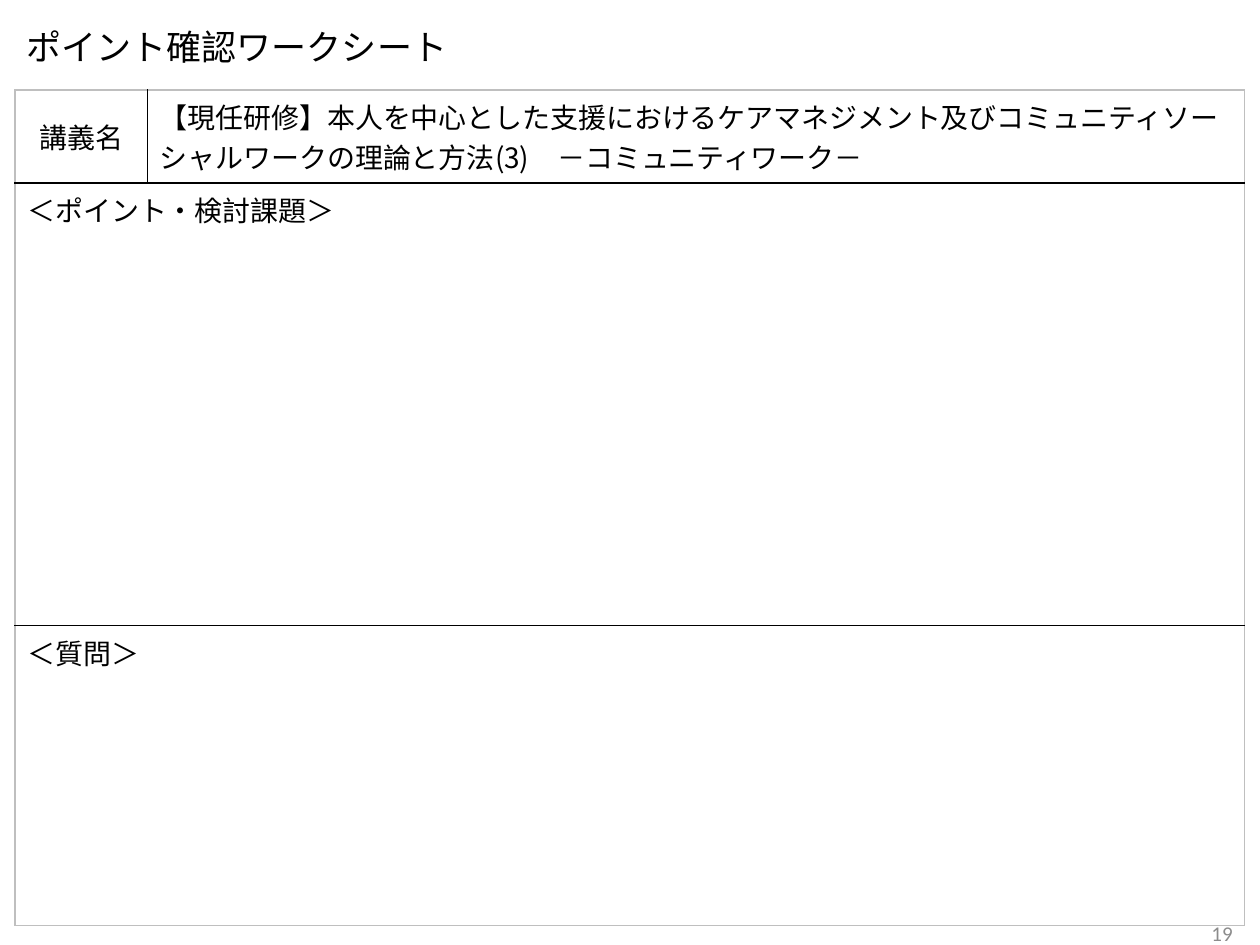
from dataclasses import dataclass

from lxml import etree
from pptx import Presentation
from pptx.dml.color import RGBColor
from pptx.enum.text import MSO_ANCHOR, MSO_AUTO_SIZE, PP_ALIGN
from pptx.oxml.ns import qn
from pptx.util import Cm, Pt

LEFT, CENTER, RIGHT = PP_ALIGN.LEFT, PP_ALIGN.CENTER, PP_ALIGN.RIGHT
TOP, MIDDLE = MSO_ANCHOR.TOP, MSO_ANCHOR.MIDDLE
NO_AUTOFIT = MSO_AUTO_SIZE.NONE
TITLE_ONLY = 5


@dataclass(frozen=True)
class Theme:
    font: str = "Noto Sans CJK JP"
    number_font: str = "Calibri"
    ink: str = "000000"
    muted: str = "8C8C8C"
    frame: str = "BFBFBF"
    title_size: int = 20
    body_size: int = 16
    number_size: int = 12
    border: float = 1


def write_text(frame, text, *, font, size, color, align=LEFT, spacing=None):
    """Put one formatted paragraph into a text frame."""
    frame.word_wrap = True
    para = frame.paragraphs[0]
    para.alignment = align
    if spacing:
        para.line_spacing = spacing
    span = para.add_run()
    span.text = text
    span.font.name = font
    span.font.size = Pt(size)
    span.font.bold = False
    span.font.color.rgb = RGBColor.from_string(color)
    # Japanese glyphs take the East Asian font
    east_asian = etree.Element(qn("a:ea"), typeface=font)
    span.font._element.find(qn("a:latin")).addnext(east_asian)


def set_borders(cell, width, colors):
    """Draw cell edges; colors run left, right, top, bottom."""
    properties = cell._tc.get_or_add_tcPr()
    for position, (edge, color) in enumerate(zip("LRTB", colors)):
        line = etree.Element(qn(f"a:ln{edge}"), w=str(Pt(width)))
        fill = etree.SubElement(line, qn("a:solidFill"))
        etree.SubElement(fill, qn("a:srgbClr"), val=color)
        properties.insert(position, line)


class Worksheet:
    def __init__(self, deck, theme):
        self.theme = theme
        self.page = deck.slides.add_slide(deck.slide_layouts[TITLE_ONLY])

    def title(self, text, left, top, width, height):
        box = self.page.shapes.title
        box.left, box.top, box.width, box.height = map(Cm, (left, top, width, height))
        frame = box.text_frame
        frame.auto_size = NO_AUTOFIT
        frame.vertical_anchor = MIDDLE
        write_text(frame, text, font=self.theme.font, size=self.theme.title_size,
                   color=self.theme.ink, spacing=0.9)

    def page_number(self, text, left, top, width, height):
        box = self.page.shapes.add_textbox(*map(Cm, (left, top, width, height)))
        box.text_frame.vertical_anchor = MIDDLE
        write_text(box.text_frame, text, font=self.theme.number_font,
                   size=self.theme.number_size, color=self.theme.muted, align=RIGHT)

    def form(self, rows, left, top, widths, heights):
        """Add a table; a row with a single text spans every column."""
        theme = self.theme
        table = self.page.shapes.add_table(
            len(heights), len(widths), Cm(left), Cm(top),
            Cm(sum(widths)), Cm(sum(heights))).table
        table.first_row = table.horz_banding = False
        for column, width in zip(table.columns, widths):
            column.width = Cm(width)
        for row, height in zip(table.rows, heights):
            row.height = Cm(height)

        # Grey outer frame, black rules inside
        last = len(widths) - 1
        rules = [theme.frame] + [theme.ink] * (len(heights) - 1) + [theme.frame]
        for r, texts in enumerate(rows):
            spanned = len(texts) == 1
            if spanned:
                table.cell(r, 0).merge(table.cell(r, last))
            for c in range(len(widths)):
                cell = table.cell(r, c)
                cell.fill.background()
                set_borders(cell, theme.border, (
                    theme.frame if spanned or c == 0 else theme.ink,
                    theme.frame if spanned or c == last else theme.ink,
                    rules[r],
                    rules[r + 1],
                ))
            for c, text in enumerate(texts):
                is_label = c == 0 and not spanned
                cell = table.cell(r, c)
                cell.vertical_anchor = MIDDLE if is_label else TOP
                write_text(cell.text_frame, text, font=theme.font,
                           size=theme.body_size, color=theme.ink,
                           align=CENTER if is_label else LEFT)


def main():
    deck = Presentation()
    deck.slide_width, deck.slide_height = Cm(25.4), Cm(19.05)
    sheet = Worksheet(deck, Theme())

    # Heading
    sheet.title("ポイント確認ワークシート", 0.28, 0.5, 22.86, 0.97)

    # Page number
    sheet.page_number("19", 19.18, 18.31, 5.92, 1.02)

    # Lecture name (two lines tall) and writing areas
    sheet.form(
        [
            ["講義名", "【現任研修】本人を中心とした支援におけるケアマネジメント及び"
                     "コミュニティソーシャルワークの理論と方法(3)　－コミュニティワーク－"],
            ["＜ポイント・検討課題＞"],
            ["＜質問＞"],
        ],
        left=0.3, top=1.81, widths=[2.67, 22.12], heights=[1.88, 8.92, 6.05])

    deck.save("out.pptx")


if __name__ == "__main__":
    main()
